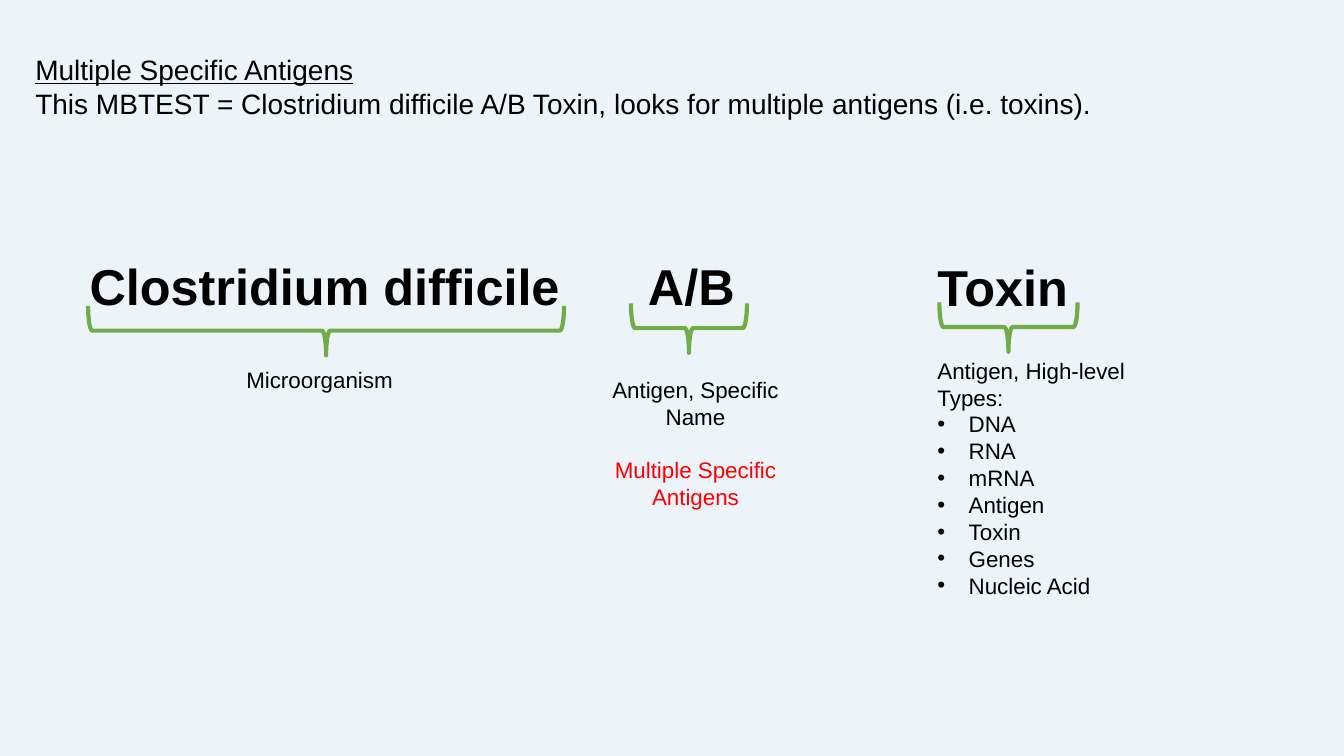
from dataclasses import dataclass

from lxml import etree
from pptx import Presentation
from pptx import util as u
from pptx.dml import color
from pptx.enum import shapes, text
from pptx.oxml import ns

COLORS = {"background": "ECF4FA", "ink": "000000", "accent": "FF0000", "brace": "70AD47"}
DECK_WIDTH, DECK_HEIGHT = u.Inches(13.33), u.Inches(7.5)
COLUMN, ROW = DECK_WIDTH / 160, DECK_HEIGHT / 90
BRACE_DEPTH = 5.88
BULLET_INDENT = u.Inches(0.31)
LEFT, CENTER = text.PP_ALIGN.LEFT, text.PP_ALIGN.CENTER


@dataclass(frozen=True)
class Area:
    column: float
    row: float
    columns: float
    rows: float


@dataclass(frozen=True)
class Label:
    wording: str
    area: Area
    size: int = 16
    bold: bool = False
    align: text.PP_ALIGN = LEFT


@dataclass(frozen=True)
class Brace:
    center_column: float
    center_row: float
    span: float


HEADING = Label(
    "Multiple Specific Antigens\n"
    "This MBTEST = Clostridium difficile A/B Toxin, looks for multiple antigens (i.e. toxins).",
    Area(3, 5.64, 141.6, 9.24), 20)
TYPES = Label(
    "Antigen, High-level\nTypes:\nDNA\nRNA\nmRNA\nAntigen\nToxin\nGenes\nNucleic Acid",
    Area(110.4, 41.88, 34.2, 30.24))
SPECIFIC_NAME = Label(
    "Antigen, Specific Name\nMultiple Specific Antigens",
    Area(69, 44.16, 27.6, 17.4), align=CENTER)
LABELS = [
    Label("Clostridium difficile", Area(9.48, 29.76, 59.64, 8.52), 36, True),
    Label("A/B", Area(75.96, 29.76, 13.8, 8.52), 36, True),
    Label("Toxin", Area(110.4, 29.88, 22.68, 8.52), 36, True),
    Label("Microorganism", Area(26.28, 42.96, 23.52, 4.44), align=CENTER),
]
BRACES = [
    Brace(38.82, 39.36, 56.64),
    Brace(82.02, 39.06, 13.8),
    Brace(120.06, 38.94, 16.44),
]


def rgb(name: str) -> color.RGBColor:
    return color.RGBColor.from_string(COLORS[name])


def place(box, area: Area) -> None:
    box.left, box.top = round(area.column * COLUMN), round(area.row * ROW)
    box.width, box.height = round(area.columns * COLUMN), round(area.rows * ROW)


def write(box, label: Label) -> None:
    place(box, label.area)
    frame = box.text_frame
    frame.text = label.wording
    frame.word_wrap = True
    frame.vertical_anchor = text.MSO_ANCHOR.TOP
    frame.auto_size = text.MSO_AUTO_SIZE.SHAPE_TO_FIT_TEXT
    for para in frame.paragraphs:
        para.alignment = label.align
        para.space_before = u.Pt(0)
        for span in para.runs:
            span.font.name = "Arial"
            span.font.size = u.Pt(label.size)
            span.font.bold = label.bold
            span.font.color.rgb = rgb("ink")


def add_label(page, label: Label):
    box = page.shapes.add_textbox(0, 0, 0, 0)
    write(box, label)
    return box


def set_bullet(para, bulleted: bool) -> None:
    indent = BULLET_INDENT if bulleted else 0
    properties = para._p.get_or_add_pPr()
    properties.set("marL", str(indent))
    properties.set("indent", str(-indent))
    if bulleted:
        etree.SubElement(properties, ns.qn("a:buFont")).set("typeface", "Arial")
        etree.SubElement(properties, ns.qn("a:buChar")).set("char", "•")
    else:
        etree.SubElement(properties, ns.qn("a:buNone"))


def add_brace(page, brace: Brace) -> None:
    shape = page.shapes.add_shape(shapes.MSO_SHAPE.LEFT_BRACE, 0, 0, 0, 0)
    place(shape, Area(brace.center_column - BRACE_DEPTH / 2,
                      brace.center_row - brace.span / 2, BRACE_DEPTH, brace.span))
    shape.rotation = 270
    shape.shadow.inherit = False
    shape.fill.background()
    shape.line.color.rgb = rgb("brace")
    shape.line.width = u.Pt(3)


def main() -> None:
    deck = Presentation()
    deck.slide_width, deck.slide_height = DECK_WIDTH, DECK_HEIGHT
    page = deck.slides.add_slide(deck.slide_layouts[1])
    page.background.fill.solid()
    page.background.fill.fore_color.rgb = rgb("background")

    write(page.shapes.title, HEADING)
    page.shapes.title.text_frame.paragraphs[0].runs[0].font.underline = True

    body = page.placeholders[1]
    write(body, TYPES)
    for index, para in enumerate(body.text_frame.paragraphs):
        set_bullet(para, index >= 2)

    for label in LABELS:
        add_label(page, label)
    for brace in BRACES:
        add_brace(page, brace)

    remark = add_label(page, SPECIFIC_NAME).text_frame.paragraphs[1]
    remark.space_before = u.Pt(19)
    remark.runs[0].font.color.rgb = rgb("accent")

    deck.save("out.pptx")


if __name__ == "__main__":
    main()
